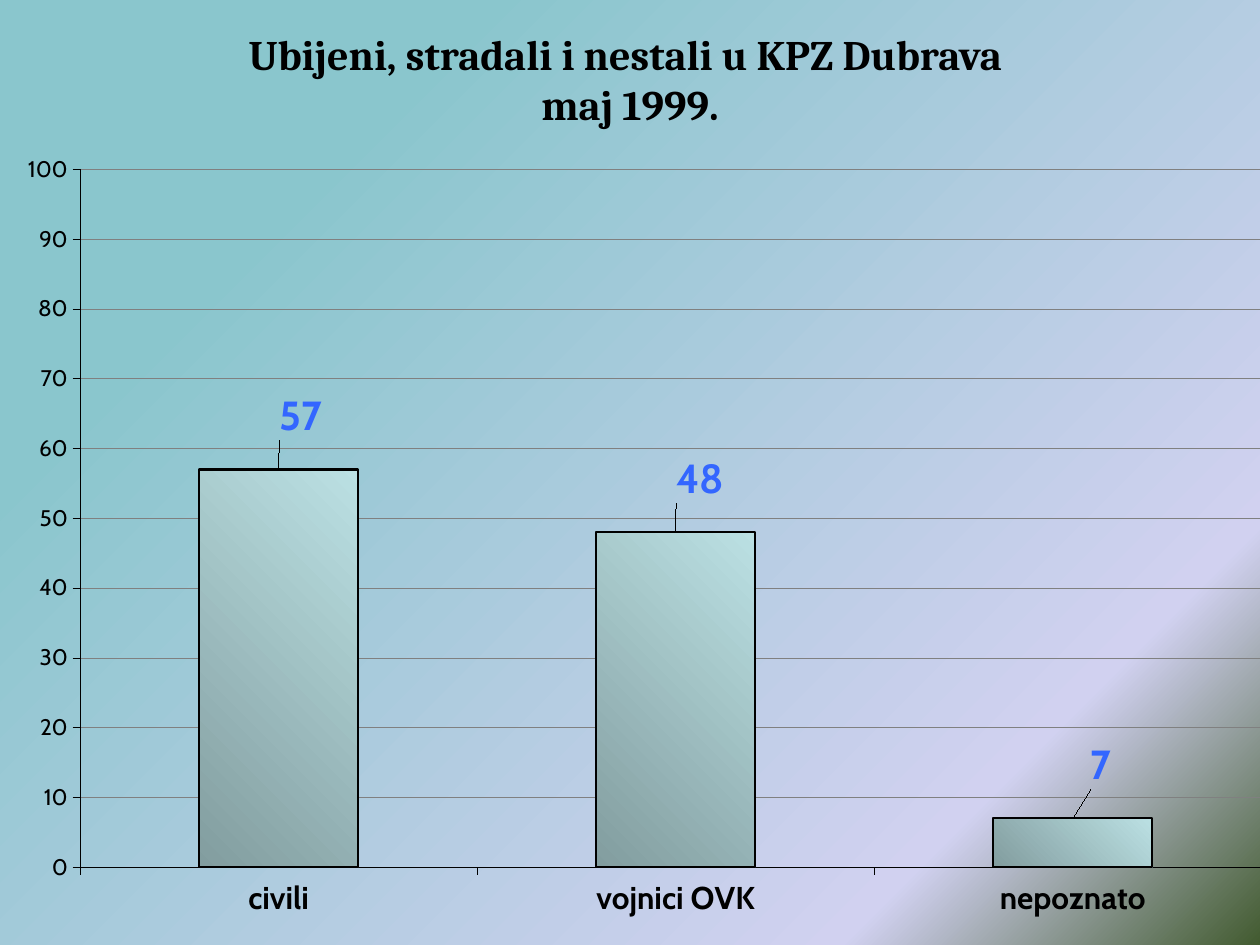
from copy import deepcopy

from lxml.etree import SubElement
from pptx import Presentation
from pptx.chart.data import CategoryChartData
from pptx.dml.color import RGBColor
from pptx.enum.chart import XL_CHART_TYPE, XL_LABEL_POSITION, XL_TICK_LABEL_POSITION, XL_TICK_MARK
from pptx.enum.text import MSO_ANCHOR, MSO_AUTO_SIZE, PP_ALIGN
from pptx.oxml.ns import qn
from pptx.util import Inches, Pt

PX = Inches(1) / 126
BLACK = RGBColor(0x00, 0x00, 0x00)
GRID_GRAY = RGBColor(0x80, 0x80, 0x80)
LABEL_BLUE = RGBColor(0x33, 0x66, 0xFF)
BAR_DARK = RGBColor(0x82, 0x9D, 0x9F)
BAR_LIGHT = RGBColor(0xBB, 0xE0, 0xE3)
TEAL = RGBColor(0x8A, 0xC6, 0xCD)
LILAC = RGBColor(0xD1, 0xD1, 0xF0)
GREEN = RGBColor(0x42, 0x5B, 0x30)


def set_font(font, name, size, color, bold):
    font.color.rgb = color
    for key, value in {"name": name, "size": Pt(size), "bold": bold}.items():
        setattr(font, key, value)


def manual_layout(**values):
    """Return a c:layout element holding the given c:manualLayout values."""
    layout = deepcopy(empty_layout)
    manual = SubElement(layout, qn("c:manualLayout"))
    for key, value in values.items():
        SubElement(manual, qn(f"c:{key}")).set("val", str(value))
    return layout


deck = Presentation()
deck.slide_width, deck.slide_height = round(1260 * PX), round(945 * PX)
page = deck.slides.add_slide(deck.slide_layouts[5])

# Background
backdrop = page.background.fill
backdrop.gradient()
backdrop.gradient_angle = 315
last_stop = page.element.xpath("p:cSld/p:bg//a:gs")[-1]
last_stop.addnext(deepcopy(last_stop))
for stop, (position, color) in zip(backdrop.gradient_stops, [(0.22, TEAL), (0.81, LILAC), (1, GREEN)]):
    stop.position = position
    stop.color.rgb = color

# Title
title = page.shapes.title
for key, value in {"left": 0, "top": 0, "width": 1260, "height": 158}.items():
    setattr(title, key, round(value * PX))
frame = title.text_frame
frame.text = "Ubijeni, stradali i nestali u KPZ Dubrava \vmaj 1999."
frame.auto_size = MSO_AUTO_SIZE.NONE
frame.vertical_anchor = MSO_ANCHOR.MIDDLE
para = frame.paragraphs[0]
para.alignment = PP_ALIGN.CENTER
for span in para.runs:
    set_font(span.font, "Cambria", 24, BLACK, True)

# Chart
data = CategoryChartData()
data.categories = ["civili", "vojnici OVK", "nepoznato"]
data.add_series("Series 1", [57, 48, 7])
chart = page.shapes.add_chart(
    XL_CHART_TYPE.COLUMN_CLUSTERED, 0, round(152 * PX), round(1292 * PX), round(793 * PX), data
).chart
chart.has_title = False
chart.has_legend = False
set_font(chart.font, "Cabin", 23, BLACK, True)

plot_area = chart.element.xpath("c:chart/c:plotArea")[0]
for old_layout in plot_area.findall(qn("c:layout")):
    plot_area.remove(old_layout)
empty_layout = SubElement(plot_area, qn("c:layout"))
plot_area.remove(empty_layout)
plot_area.insert(0, manual_layout(
    layoutTarget="inner", xMode="edge", yMode="edge", x=0.062, y=0.022, w=0.922, h=0.88))

# Axes
for axis, size, bold in [(chart.category_axis, 18, True), (chart.value_axis, 12.9, False)]:
    set_font(axis.tick_labels.font, "Cabin", size, BLACK, bold)
    axis.format.line.color.rgb = BLACK
    axis.format.line.width = Pt(0.32)
    axis.major_tick_mark = XL_TICK_MARK.OUTSIDE
    axis.minor_tick_mark = XL_TICK_MARK.NONE
chart.category_axis.tick_label_position = XL_TICK_LABEL_POSITION.LOW
scale = {"minimum_scale": 0, "maximum_scale": 100, "major_unit": 10, "has_major_gridlines": True}
for key, value in scale.items():
    setattr(chart.value_axis, key, value)
grid_line = chart.value_axis.major_gridlines.format.line
grid_line.color.rgb = GRID_GRAY
grid_line.width = Pt(0.32)

# Bars
plot = chart.plots[0]
plot.gap_width = 150
plot.vary_by_categories = False
bars = plot.series[0]
bars.format.line.color.rgb = BLACK
bars.format.line.width = Pt(1.29)
bar_fill = bars.format.fill
bar_fill.gradient()
bar_fill.gradient_angle = 45
for stop, position, color in zip(bar_fill.gradient_stops, (0, 1), (BAR_DARK, BAR_LIGHT)):
    stop.position = position
    stop.color.rgb = color

# Value labels, each shifted right and up from its bar
for index, shift in enumerate([0.017, 0.019, 0.022]):
    label = bars.points[index].data_label
    set_font(label.font, "Cabin", 23.2, LABEL_BLUE, True)
    label.position = XL_LABEL_POSITION.OUTSIDE_END
    label_index = bars.data_labels._element.xpath(f"c:dLbl/c:idx[@val='{index}']")[0]
    label_index.addnext(manual_layout(x=shift, y=-0.03))
bars.data_labels.show_value = True

deck.save("out.pptx")
